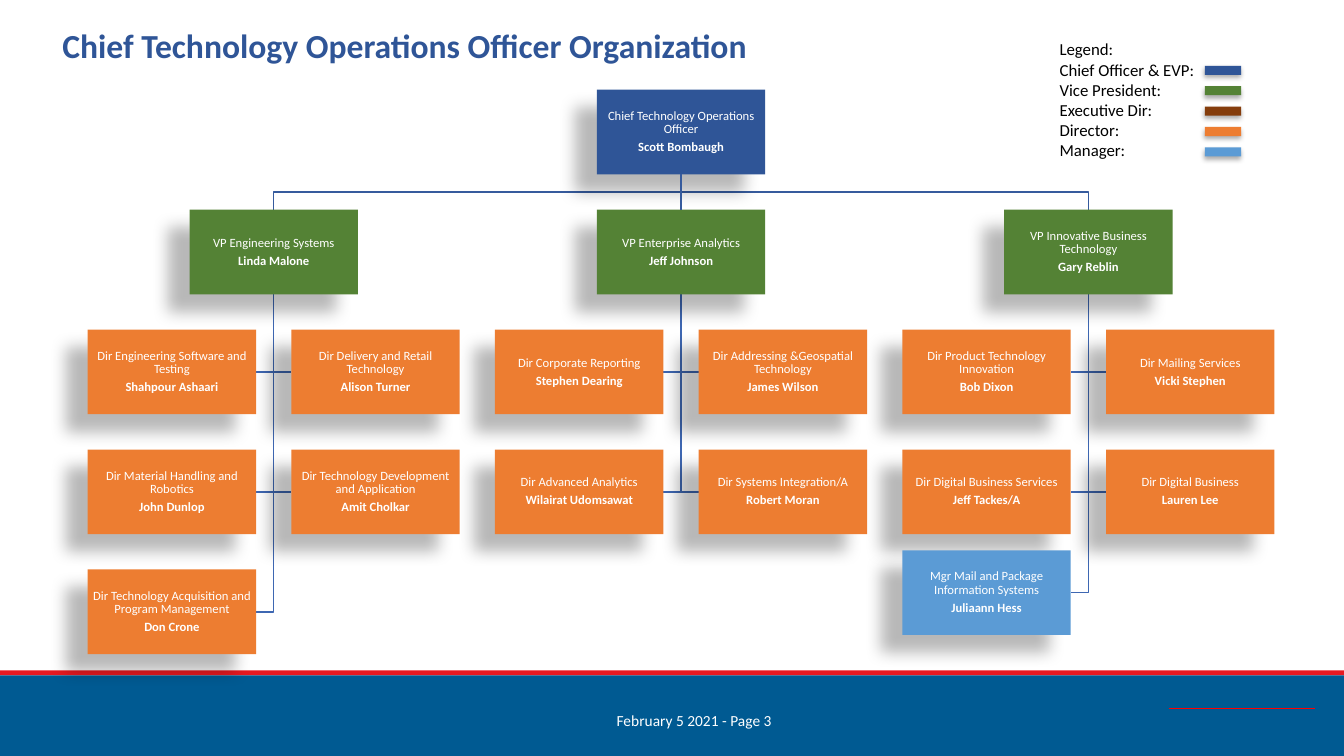
from dataclasses import dataclass

from lxml.etree import SubElement
from pptx import Presentation
from pptx.dml.color import RGBColor
from pptx.enum.shapes import MSO_CONNECTOR, MSO_SHAPE
from pptx.enum.text import MSO_ANCHOR, PP_ALIGN
from pptx.oxml.ns import qn
from pptx.util import Inches, Pt


@dataclass(frozen=True)
class Theme:
    font: str = "Calibri"
    officer: str = "2F5597"
    vp: str = "548235"
    executive: str = "843C0B"
    director: str = "ED7D31"
    manager: str = "5B9BD5"
    top_line: str = "365B9D"
    branch_line: str = "3E67B2"
    band: str = "005A92"
    stripe: str = "E71921"
    accent: str = "FF0000"
    light: str = "FFFFFF"
    dark: str = "000000"
    title_size: int = 24
    legend_size: int = 12
    footer_size: int = 11
    box_size: int = 9
    box_shadow: tuple = (28, 11.8, 19.7, 141)
    swatch_shadow: tuple = (32, 3.5, 2.2, 90)


class OrgSlide:
    LEFT, TOP = Inches(0.87), Inches(0.89)
    COL, ROW = Inches(2.02), Inches(1.19)
    BOX_W, BOX_H = Inches(1.67), Inches(0.84)

    def __init__(self, prs, theme):
        self.theme = theme
        self.width, self.height = prs.slide_width, prs.slide_height
        self.shapes = prs.slides.add_slide(prs.slide_layouts[6]).shapes

    def share(self, *pcts):
        sides = (self.width, self.height) * 2
        return [round(side * pct / 100) for side, pct in zip(sides, pcts)]

    def cell(self, col, row):
        return round(self.LEFT + col * self.COL), round(self.TOP + row * self.ROW)

    def anchor(self, col, row, dx, dy):
        x, y = self.cell(col, row)
        return round(x + dx * self.BOX_W), round(y + dy * self.BOX_H)

    def fill_text(self, shape, lines, size, color, align=PP_ALIGN.LEFT):
        tf = shape.text_frame
        tf.word_wrap = True
        tf.text = "\n".join(lines)
        for p in tf.paragraphs:
            p.alignment = align
            for r in p.runs:
                r.font.name = self.theme.font
                r.font.size = Pt(size)
                r.font.color.rgb = RGBColor.from_string(color)
        return tf

    def text(self, pcts, lines, size, color, align=PP_ALIGN.LEFT):
        sp = self.shapes.add_textbox(*self.share(*pcts))
        return self.fill_text(sp, lines, size, color, align)

    def rect(self, bounds, color, shadow=None):
        sp = self.shapes.add_shape(MSO_SHAPE.RECTANGLE, *bounds)
        sp.fill.solid()
        sp.fill.fore_color.rgb = RGBColor.from_string(color)
        sp.line.fill.background()
        sp.shadow.inherit = False
        if shadow:
            alpha, blur, dist, angle = shadow
            effects = sp._element.spPr.find(qn("a:effectLst"))
            outer = SubElement(effects, qn("a:outerShdw"), blurRad=str(Pt(blur)),
                               dist=str(Pt(dist)), dir=str(angle * 60000),
                               algn="ctr", rotWithShape="0")
            clr = SubElement(outer, qn("a:srgbClr"), val=self.theme.dark)
            SubElement(clr, qn("a:alpha"), val=str(alpha * 1000))
        return sp

    def box(self, col, row, color, role, person):
        sp = self.rect((*self.cell(col, row), self.BOX_W, self.BOX_H),
                       color, self.theme.box_shadow)
        tf = self.fill_text(sp, (role, person), self.theme.box_size,
                            self.theme.light, PP_ALIGN.CENTER)
        tf.vertical_anchor = MSO_ANCHOR.MIDDLE
        tf.margin_left = tf.margin_right = Inches(0.01)
        tf.margin_top = tf.margin_bottom = Inches(0.01)
        for p in tf.paragraphs:
            p.line_spacing = 0.9
            p.space_after = Pt(3.15)
        tf.paragraphs[1].runs[0].font.bold = True
        return sp

    def stroke(self, shape, color):
        shape.line.color.rgb = RGBColor.from_string(color)
        shape.line.width = Pt(1)

    def elbow(self, points, color):
        builder = self.shapes.build_freeform(*points[0])
        builder.add_line_segments(points[1:], close=False)
        sp = builder.convert_to_shape()
        sp.fill.background()
        sp.shadow.inherit = False
        self.stroke(sp, color)

    def line(self, start, end, color):
        cxn = self.shapes.add_connector(MSO_CONNECTOR.STRAIGHT, *start, *end)
        self.stroke(cxn, color)
        SubElement(cxn._element.spPr, qn("a:effectLst"))
        return cxn

    def drop(self, parent, child):
        x0, y0 = self.anchor(*parent, 0.5, 1)
        x1, y1 = self.anchor(*child, 0.5, 0)
        mid = (y0 + y1) // 2
        self.elbow([(x0, y0), (x0, mid), (x1, mid), (x1, y1)], self.theme.top_line)

    def branch(self, parent, child):
        x0, y0 = self.anchor(*parent, 0.5, 1)
        x1, y1 = self.anchor(*child, child[0] < parent[0], 0.5)
        self.elbow([(x0, y0), (x0, y1), (x1, y1)], self.theme.branch_line)


THEME = Theme()
CHIEF = (2.5, 0)
VPS = [
    (0.5, 1, "VP Engineering Systems", "Linda Malone"),
    (2.5, 1, "VP Enterprise Analytics", "Jeff Johnson"),
    (4.5, 1, "VP Innovative Business Technology", "Gary Reblin"),
]
DIRECTORS = [
    (0, 2, "Dir Engineering Software and Testing", "Shahpour Ashaari"),
    (1, 2, "Dir Delivery and Retail Technology", "Alison Turner"),
    (0, 3, "Dir Material Handling and Robotics", "John Dunlop"),
    (1, 3, "Dir Technology Development and Application", "Amit Cholkar"),
    (0, 4, "Dir Technology Acquisition and Program Management", "Don Crone"),
    (2, 2, "Dir Corporate Reporting", "Stephen Dearing"),
    (3, 2, "Dir Addressing &Geospatial Technology", "James Wilson"),
    (2, 3, "Dir Advanced Analytics", "Wilairat Udomsawat"),
    (3, 3, "Dir Systems Integration/A", "Robert Moran"),
    (4, 2, "Dir Product Technology Innovation", "Bob Dixon"),
    (5, 2, "Dir Mailing Services", "Vicki Stephen"),
    (4, 3, "Dir Digital Business Services", "Jeff Tackes/A"),
    (5, 3, "Dir Digital Business", "Lauren Lee"),
]
MANAGERS = [(4, 3.84, "Mgr Mail and Package Information Systems", "Juliaann Hess")]
LEGEND = {
    "Chief Officer & EVP:": THEME.officer,
    "Vice President:": THEME.vp,
    "Executive Dir:": THEME.executive,
    "Director:": THEME.director,
    "Manager:": THEME.manager,
}


def draw_frame(s):
    s.rect(s.share(0, 88.67, 100, 0.67), THEME.stripe)
    s.rect(s.share(0, 89.33, 100, 10.67), THEME.band)
    s.text((40.89, 93.47, 21.53, 3.87), ["February 5 2021 - Page 3"],
           THEME.footer_size, THEME.light, PP_ALIGN.CENTER)
    s.line(s.share(86.95, 93.73), s.share(97.82, 93.73), THEME.accent)
    tf = s.text((3.9, -3.33, 86.27, 19.33),
                ["Chief Technology Operations Officer Organization"],
                THEME.title_size, THEME.officer)
    tf.vertical_anchor = MSO_ANCHOR.MIDDLE
    tf.paragraphs[0].line_spacing = 0.9
    tf.paragraphs[0].runs[0].font.bold = True


def draw_chart(s):
    for child in DIRECTORS + MANAGERS:
        s.branch(VPS[child[0] // 2][:2], child[:2])
    for vp in (VPS[0], VPS[-1]):
        s.drop(CHIEF, vp[:2])
    chief = s.box(*CHIEF, THEME.officer,
                  "Chief Technology Operations Officer", "Scott Bombaugh")
    levels = ((VPS, THEME.vp), (DIRECTORS, THEME.director), (MANAGERS, THEME.manager))
    boxes = {(col, row): s.box(col, row, color, role, person)
             for level, color in levels for col, row, role, person in level}
    middle = VPS[1][:2]
    stem = s.line(s.anchor(*CHIEF, 0.5, 1), s.anchor(*middle, 0.5, 0), THEME.top_line)
    stem.begin_connect(chief, 2)
    stem.end_connect(boxes[middle], 0)


def draw_legend(s):
    s.text((78.1, 4.53, 19.58, 17.47), ["Legend:", *LEGEND],
           THEME.legend_size, THEME.dark)
    for i, color in enumerate(LEGEND.values()):
        s.rect(s.share(89.65, 8.7 + 2.7 * i, 2.7, 1.2), color, THEME.swatch_shadow)


def main():
    prs = Presentation()
    prs.slide_width, prs.slide_height = Inches(13.33), Inches(7.5)
    s = OrgSlide(prs, THEME)
    draw_frame(s)
    draw_chart(s)
    draw_legend(s)
    prs.save("out.pptx")


if __name__ == "__main__":
    main()
